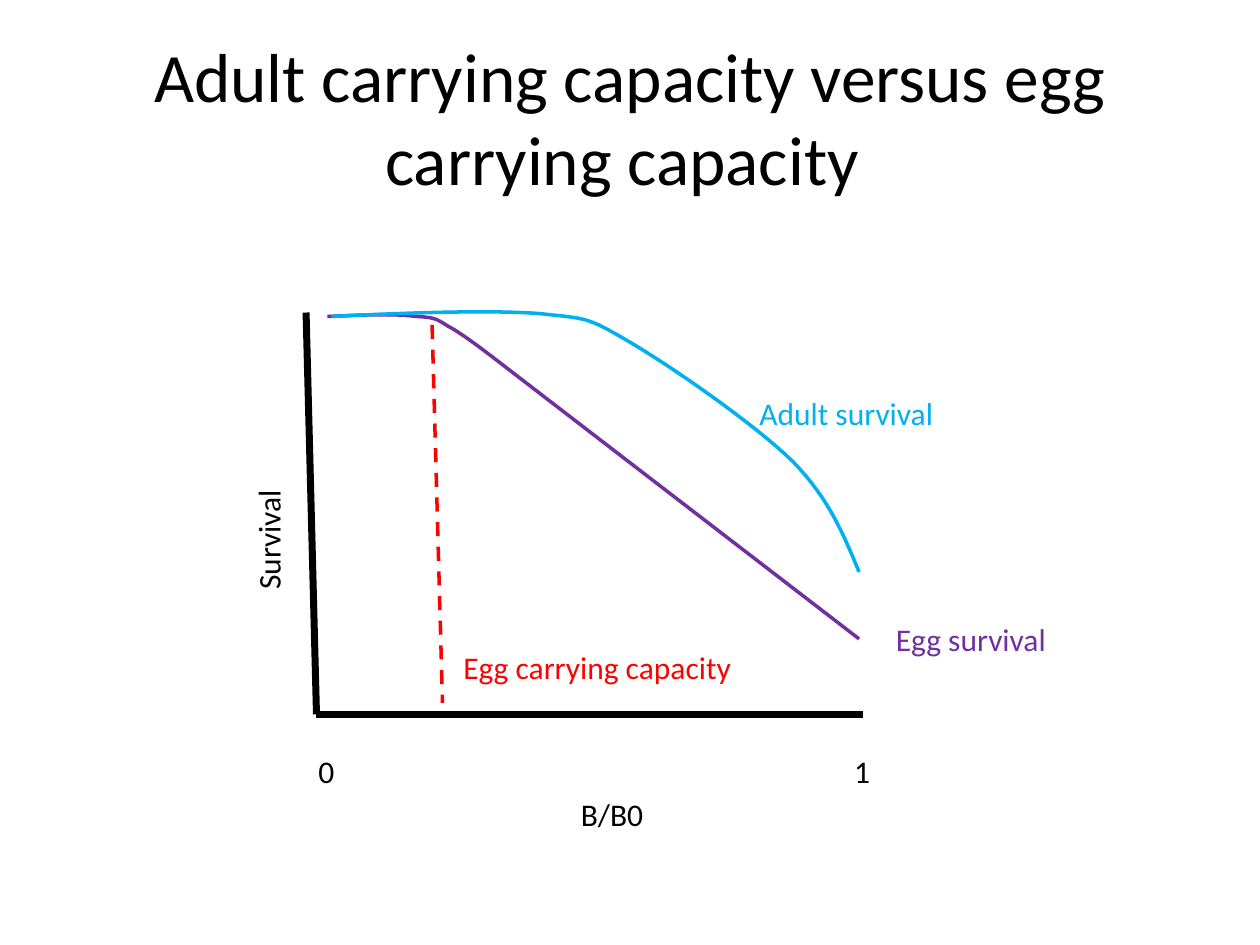
from math import comb

from lxml import etree
from pptx import Presentation
from pptx.dml.color import RGBColor
from pptx.enum.dml import MSO_LINE
from pptx.enum.shapes import MSO_CONNECTOR
from pptx.enum.text import MSO_ANCHOR, MSO_AUTO_SIZE, PP_ALIGN
from pptx.oxml.ns import qn
from pptx.util import Cm, Pt

STRAIGHT = MSO_CONNECTOR.STRAIGHT
DASH = MSO_LINE.DASH
MIDDLE = MSO_ANCHOR.MIDDLE
FIT_SHAPE = MSO_AUTO_SIZE.SHAPE_TO_FIT_TEXT
CENTER = PP_ALIGN.CENTER

COLORS = {"black": "000000", "egg": "7030A0", "adult": "00B0F0", "capacity": "FF0000"}
STEPS = 16  # straight pieces per curve segment


def set_text(tf, text, size, color):
    p = tf.paragraphs[0]
    r = p.add_run()
    r.text = text
    for name, value in {"name": "Calibri", "size": Pt(size)}.items():
        setattr(r.font, name, value)
    r.font.color.rgb = RGBColor.from_string(COLORS[color])
    return p


def set_line(sp, color, width):
    sp.line.color.rgb = RGBColor.from_string(COLORS[color])
    sp.line.width = Pt(width)


prs = Presentation()
prs.slide_width, prs.slide_height = Cm(25.4), Cm(19.05)
s = prs.slides.add_slide(prs.slide_layouts[5])

# Title
title = s.shapes.title
box = {"left": 1.27, "top": 0.76, "width": 22.86, "height": 3.18}
for name, value in box.items():
    setattr(title, name, Cm(value))
tf = title.text_frame
tf.vertical_anchor = MIDDLE
p = set_text(tf, "Adult carrying capacity versus egg carrying capacity ", 39.6, "black")
p.alignment = CENTER

# Survival curves: a start point, then segments of control points
curves = [
    ("egg", (6.6, 6.38), [
        [(7.29, 6.35), (7.98, 6.32), (8.38, 6.38)],
        [(8.79, 6.4), (8.79, 6.43), (9.04, 6.58)],
        [(9.3, 6.71), (9.88, 7.16), (9.88, 7.16)],
        [(17.32, 12.88)],
    ]),
    ("adult", (6.68, 6.38), [
        [(8.28, 6.3), (9.88, 6.25), (10.87, 6.32)],
        [(11.86, 6.43), (11.81, 6.38), (12.67, 6.88)],
        [(13.51, 7.37), (15.19, 8.53), (15.98, 9.3)],
        [(16.74, 10.08), (17.02, 10.82), (17.32, 11.53)],
    ]),
]
for color, start, segments in curves:
    points = [start]
    for segment in segments:
        controls = [points[-1], *segment]
        n = len(segment)
        steps = STEPS if n > 1 else 1
        for i in range(1, steps + 1):
            t = i / steps
            weights = [comb(n, k) * t**k * (1 - t) ** (n - k) for k in range(n + 1)]
            points.append(tuple(
                sum(w * c[axis] for w, c in zip(weights, controls)) for axis in (0, 1)
            ))
    vertices = [(Cm(x), Cm(y)) for x, y in points]
    builder = s.shapes.build_freeform(*vertices[0])
    builder.add_line_segments(vertices[1:], close=False)
    sp = builder.convert_to_shape()
    sp.shadow.inherit = False
    sp.fill.background()
    set_line(sp, color, 2)

# Axes and the egg capacity marker, which is grouped with its label
group = s.shapes.add_group_shape()
lines = [
    (s.shapes, (6.17, 6.3, 6.38, 14.4), "black", 4, None),
    (s.shapes, (6.38, 14.4, 17.4, 14.4), "black", 4, None),
    (group.shapes, (8.71, 6.55, 8.92, 14.17), "capacity", 2, DASH),
]
for shapes, ends, color, width, dash in lines:
    line = shapes.add_connector(STRAIGHT, *map(Cm, ends))
    set_line(line, color, width)
    line.line.dash_style = dash
    etree.SubElement(line._element.spPr, qn("a:effectLst"))

# Labels: left, top, width, rotation
labels = [
    (s.shapes, "0", 6.17, 15.04, 0.84, 0, "black"),
    (s.shapes, "1", 16.97, 15.04, 0.84, 0, "black"),
    (s.shapes, "B/B0", 11.46, 15.9, 1.78, 0, "black"),
    (s.shapes, "Survival", 4.14, 10.36, 2.54, 270, "black"),
    (s.shapes, "Adult survival", 15.06, 7.82, 4.06, 0, "adult"),
    (s.shapes, "Egg survival", 17.81, 12.37, 3.58, 0, "egg"),
    (group.shapes, "Egg carrying capacity", 9.09, 12.93, 5.97, 0, "capacity"),
]
for shapes, text, left, top, width, rotation, color in labels:
    sp = shapes.add_textbox(Cm(left), Cm(top), Cm(width), Cm(1.02))
    sp.rotation = rotation
    tf = sp.text_frame
    for name, value in {"word_wrap": False, "auto_size": FIT_SHAPE}.items():
        setattr(tf, name, value)
    set_text(tf, text, 18, color)

prs.save("out.pptx")
